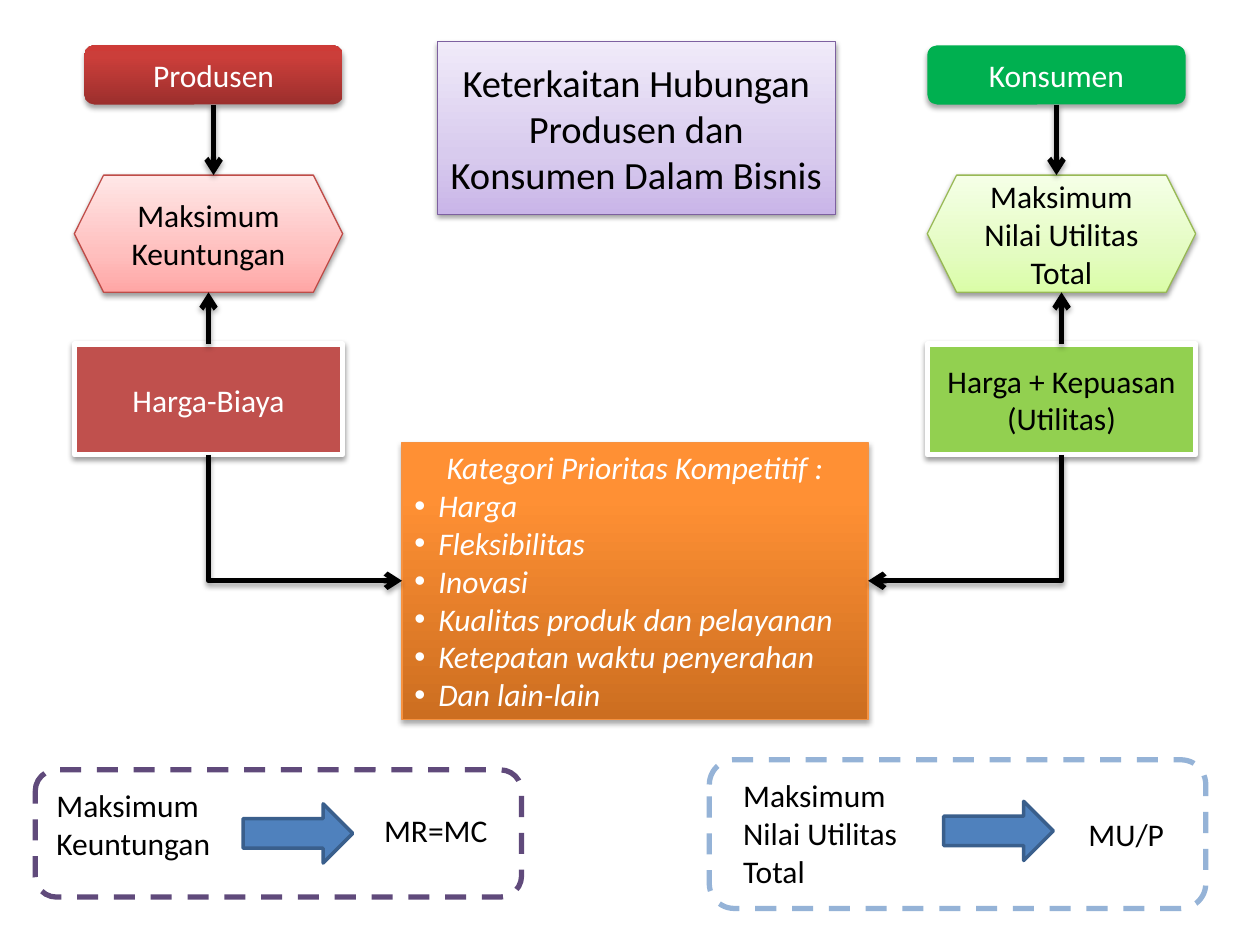
from copy import deepcopy
from lxml.etree import SubElement
from pptx import Presentation
from pptx.dml.color import RGBColor
from pptx.enum.dml import MSO_LINE
from pptx.enum.shapes import MSO_CONNECTOR as CONN, MSO_SHAPE as SHAPE
from pptx.enum.text import MSO_ANCHOR, MSO_AUTO_SIZE, PP_ALIGN
from pptx.oxml.ns import qn
from pptx.util import Inches, Pt

BLACK, WHITE = "000000", "FFFFFF"
TOP, LEFT, BOTTOM, RIGHT = range(4)
STRONG = {"alpha": 35, "dist": 1.8}
SOFT = {"alpha": 38, "dist": 1.6}
PRIORITIES = ["Harga", "Fleksibilitas", "Inovasi", "Kualitas produk dan pelayanan",
              "Ketepatan waktu penyerahan", "Dan lain-lain"]


def rgb(value):
    return RGBColor.from_string(value)


def place(sp, box):
    for name, value in zip(("left", "top", "width", "height"), box):
        setattr(sp, name, Inches(value))


def set_fill(sp, fill):
    """Fill with one colour, a list of (position, colour) from the bottom up, or nothing."""
    if fill is None:
        sp.fill.background()
    elif isinstance(fill, str):
        sp.fill.solid()
        sp.fill.fore_color.rgb = rgb(fill)
    else:
        sp.fill.gradient()
        sp.fill.gradient_angle = 90
        stops = sp._element.spPr.find(qn("a:gradFill")).find(qn("a:gsLst"))
        stops.append(deepcopy(stops[0]))
        for stop, (position, color) in zip(sp.fill.gradient_stops, fill):
            stop.position = position / 100
            stop.color.rgb = rgb(color)


def set_line(sp, color, width, dash=None):
    sp.line.color.rgb = rgb(color)
    sp.line.width = Pt(width)
    if dash:
        sp.line.dash_style = dash


def set_shadow(sp, shadow):
    """Add the effect list last, after fill and line, as the schema orders it."""
    effects = SubElement(sp._element.spPr, qn("a:effectLst"))
    if shadow:
        outer = SubElement(effects, qn("a:outerShdw"), blurRad=str(Pt(3.1)),
                           dist=str(Pt(shadow["dist"])), dir="5400000", rotWithShape="0")
        color = SubElement(outer, qn("a:srgbClr"), val=BLACK)
        SubElement(color, qn("a:alpha"), val=str(shadow["alpha"] * 1000))


def write(p, text, color, align=None, **fmt):
    p.alignment = align
    r = p.add_run()
    r.text = text
    r.font.color.rgb = rgb(color)
    for name, value in {"name": "Calibri", "size": Pt(18), **fmt}.items():
        setattr(r.font, name, value)


def style(sp, fill, line=None, shadow=None):
    set_fill(sp, fill)
    if line:
        set_line(sp, *line)
    else:
        sp.line.fill.background()
    set_shadow(sp, shadow)


def add_box(s, kind, box, fill, line=None, shadow=None, text=None, color=BLACK, **fmt):
    sp = s.shapes.add_shape(kind, *map(Inches, box))
    style(sp, fill, line, shadow)
    if text:
        sp.text_frame.vertical_anchor = MSO_ANCHOR.MIDDLE
        write(sp.text_frame.paragraphs[0], text, color, PP_ALIGN.CENTER, **fmt)
    return sp


def add_label(s, box, text, wrap):
    tf = s.shapes.add_textbox(*map(Inches, box)).text_frame
    tf.word_wrap = wrap
    tf.auto_size = MSO_AUTO_SIZE.SHAPE_TO_FIT_TEXT
    write(tf.paragraphs[0], text, BLACK)


def add_bullet(tf, text):
    p = tf.add_paragraph()
    write(p, text, WHITE, PP_ALIGN.LEFT, italic=True)
    pPr = p._p.get_or_add_pPr()
    pPr.set("marL", str(Inches(0.19)))
    pPr.set("indent", str(-Inches(0.19)))
    SubElement(pPr, qn("a:buFont"), typeface="Arial")
    SubElement(pPr, qn("a:buChar"), char="•")


def style_arrow(c):
    set_line(c, BLACK, 3)
    SubElement(c.line._get_or_add_ln(), qn("a:tailEnd"), type="arrow")
    set_shadow(c, STRONG)


def add_arrow(s, box, site, end_y):
    """Vertical arrow from a side of a box to the height end_y."""
    x = box.left + box.width // 2
    c = s.shapes.add_connector(CONN.STRAIGHT, x, box.top, x, Inches(end_y))
    c.begin_connect(box, site)
    style_arrow(c)


def add_elbow(s, start, end, site, rotation, flip):
    """One-bend arrow, down from start and then sideways into end."""
    x1, y1 = start.left + start.width // 2, start.top + start.height
    x2 = end.left + (end.width if site == RIGHT else 0)
    y2 = end.top + end.height // 2
    c = s.shapes.add_connector(CONN.ELBOW, x1, y1, x2, y2)
    c.begin_connect(start, BOTTOM)
    c.end_connect(end, site)
    # The preset bends sideways first, so it lies turned by a quarter.
    across, down = abs(x2 - x1), y2 - y1
    c.left, c.top = (x1 + x2 - down) // 2, (y1 + y2 - across) // 2
    c.width, c.height = down, across
    spPr = c._element.spPr
    spPr.find(qn("a:prstGeom")).set("prst", "bentConnector2")
    xfrm = spPr.find(qn("a:xfrm"))
    xfrm.set("rot", str(rotation * 60000))
    xfrm.set("flipH", str(int(flip)))
    style_arrow(c)


def add_side(s, x, header, goal, basis):
    """Column of header, goal and basis joined by arrows; returns the basis box."""
    head = add_box(s, SHAPE.ROUNDED_RECTANGLE, (header.pop("x"), 0.36, 2.05, 0.47),
                   shadow=STRONG, color=WHITE, **header)
    add_box(s, SHAPE.HEXAGON, (x, 1.39, 2.13, 0.93), shadow=SOFT, **goal)
    base = add_box(s, SHAPE.RECTANGLE, (x, 2.73, 2.13, 0.88), line=(WHITE, 3),
                   shadow=SOFT, **basis)
    add_arrow(s, head, BOTTOM, 1.39)
    add_arrow(s, base, TOP, 2.32)
    return base


def add_formula(s, frame, color, goal_box, goal, arrow_at, result_box, result):
    add_box(s, SHAPE.ROUNDED_RECTANGLE, frame, None, (color, 3, MSO_LINE.DASH))
    add_label(s, goal_box, goal, True)
    add_box(s, SHAPE.RIGHT_ARROW, (*arrow_at, 0.87, 0.47), "4F81BD", ("3A5F8C", 2))
    add_label(s, result_box, result, False)


def add_title(s):
    sp = s.shapes.title
    place(sp, (3.47, 0.33, 3.16, 1.37))
    style(sp, [(0, "C9B5E8"), (35, "D8CBEE"), (100, "F0EAF9")], ("7D60A0", 0.75), SOFT)
    tf = sp.text_frame
    tf.auto_size = MSO_AUTO_SIZE.NONE
    tf.vertical_anchor = MSO_ANCHOR.MIDDLE
    write(tf.paragraphs[0], "Keterkaitan Hubungan Produsen dan Konsumen Dalam Bisnis",
          BLACK, PP_ALIGN.CENTER, size=Pt(22))


def main():
    prs = Presentation()
    prs.slide_width, prs.slide_height = Inches(10), Inches(7.5)
    s = prs.slides.add_slide(prs.slide_layouts[5])
    add_title(s)

    cost = add_side(
        s, 0.59,
        {"x": 0.67, "text": "Produsen",
         "fill": [(0, "9C2F2D"), (80, "CB3E3A"), (100, "CE3B37")]},
        {"text": "Maksimum Keuntungan", "line": ("BF4C48", 0.75),
         "fill": [(0, "FFA6A5"), (35, "FFC0BF"), (100, "FFE7E7")]},
        {"text": "Harga-Biaya", "fill": "C0504D", "color": WHITE})
    utility = add_side(
        s, 7.36,
        {"x": 7.36, "text": "Konsumen", "fill": "00B050"},
        {"text": "Maksimum Nilai Utilitas Total", "line": ("98B955", 0.75),
         "fill": [(0, "DAFDA7"), (35, "E4FCC2"), (100, "F5FFE7")]},
        {"text": "Harga + Kepuasan (Utilitas)", "fill": "92D050"})

    priorities = add_box(s, SHAPE.RECTANGLE, (3.19, 3.51, 3.7, 2.2),
                         [(0, "CC6E20"), (80, "FF9034"), (100, "FF9136")],
                         ("F69240", 0.75), STRONG, "Kategori Prioritas Kompetitif :",
                         WHITE, italic=True)
    for text in PRIORITIES:
        add_bullet(priorities.text_frame, text)
    add_elbow(s, cost, priorities, LEFT, 270, True)
    add_elbow(s, utility, priorities, RIGHT, 90, False)

    add_formula(s, (0.28, 6.11, 3.86, 1.01), "604A7B", (0.35, 6.19, 1.5, 0.71),
                "Maksimum Keuntungan", (1.93, 6.38), (2.95, 6.39, 1.03, 0.4), "MR=MC")
    add_formula(s, (5.63, 6.03, 3.94, 1.18), "95B3D7", (5.8, 6.11, 1.65, 1.01),
                "Maksimum Nilai Utilitas Total", (7.49, 6.36), (8.54, 6.42, 0.81, 0.4), "MU/P")
    prs.save("out.pptx")


if __name__ == "__main__":
    main()
